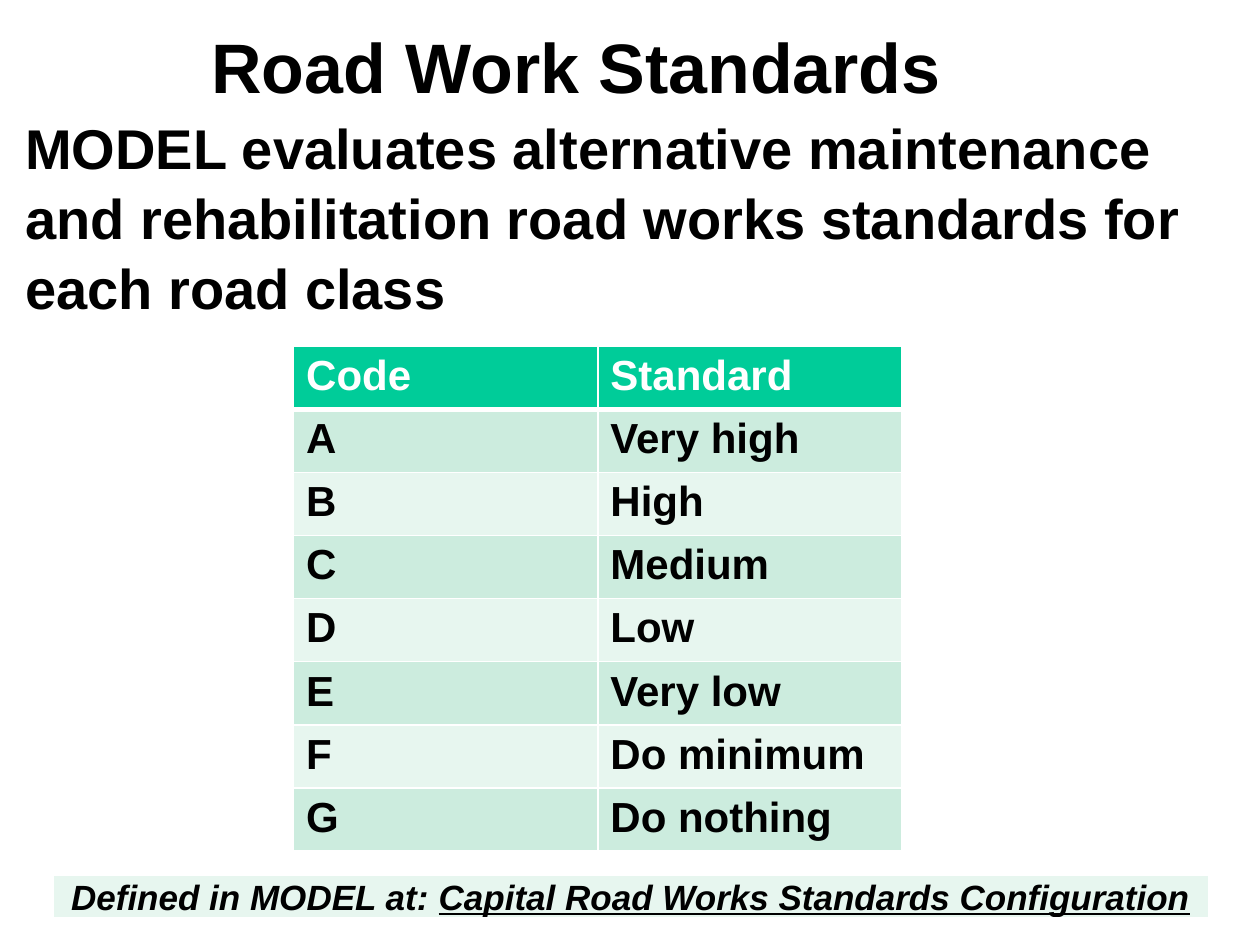
from lxml.etree import SubElement
from pptx import Presentation
from pptx.dml.color import RGBColor
from pptx.enum.text import MSO_ANCHOR, PP_ALIGN
from pptx.oxml.ns import qn
from pptx.util import Inches, Pt

BLACK = RGBColor(0x00, 0x00, 0x00)
WHITE = RGBColor(0xFF, 0xFF, 0xFF)
GREEN = RGBColor(0x00, 0xCC, 0x99)
MINT = RGBColor(0xCC, 0xEC, 0xDE)
PALE = RGBColor(0xE7, 0xF6, 0xEF)

STANDARDS = [
    ("Code", "Standard"),
    ("A", "Very high"),
    ("B", "High"),
    ("C", "Medium"),
    ("D", "Low"),
    ("E", "Very low"),
    ("F", "Do minimum"),
    ("G", "Do nothing"),
]


def add_run(p, text, size, color=BLACK, italic=None, underline=None):
    r = p.add_run()
    r.text = text
    font = r.font
    font.name = "Arial"
    font.size = Pt(size)
    font.bold = True
    font.italic = italic
    font.underline = underline
    font.color.rgb = color


def set_borders(cell, bottom=1):
    tcPr = cell._tc.get_or_add_tcPr()
    for side, width in (("L", 1), ("R", 1), ("T", 1), ("B", bottom)):
        ln = SubElement(tcPr, qn(f"a:ln{side}"), w=str(Pt(width)))
        fill = SubElement(ln, qn("a:solidFill"))
        SubElement(fill, qn("a:srgbClr"), val=str(WHITE))


def fill_cell(cell, color, bottom=1):
    set_borders(cell, bottom)
    cell.fill.solid()
    cell.fill.fore_color.rgb = color


def add_statement(s, left, top, width, height):
    sp = s.shapes.title
    sp.left, sp.top, sp.width, sp.height = left, top, width, height
    tf = sp.text_frame
    tf.word_wrap = True
    tf.vertical_anchor = MSO_ANCHOR.MIDDLE
    p = tf.paragraphs[0]
    p.alignment = PP_ALIGN.LEFT
    p.line_spacing = 1.04
    add_run(p, "MODEL evaluates alternative maintenance and rehabilitation "
               "road works standards for each road class", 32)


def add_heading(s, left, top, width, height):
    tf = s.shapes.add_textbox(left, top, width, height).text_frame
    tf.word_wrap = True
    tf.vertical_anchor = MSO_ANCHOR.MIDDLE
    add_run(tf.paragraphs[0], "Road Work Standards", 40)


def add_standards(s, left, top, width, height):
    table = s.shapes.add_table(len(STANDARDS), 2, left, top, width, height).table
    for i, row in enumerate(STANDARDS):
        header = i == 0
        color = GREEN if header else MINT if i % 2 else PALE
        for j, text in enumerate(row):
            cell = table.cell(i, j)
            fill_cell(cell, color, bottom=3 if header else 1)
            add_run(cell.text_frame.paragraphs[0], text, 24,
                    WHITE if header else BLACK)


def add_reference(s, left, top, width, height):
    cell = s.shapes.add_table(1, 1, left, top, width, height).table.cell(0, 0)
    fill_cell(cell, PALE)
    cell.margin_left = cell.margin_right = 0
    cell.margin_top = cell.margin_bottom = 0
    cell.vertical_anchor = MSO_ANCHOR.BOTTOM
    p = cell.text_frame.paragraphs[0]
    p.alignment = PP_ALIGN.CENTER
    add_run(p, "Defined in MODEL at: ", 20, italic=True)
    add_run(p, "Capital Road Works Standards Configuration", 20,
            italic=True, underline=True)


def main():
    prs = Presentation()
    prs.slide_width = Inches(10)
    prs.slide_height = Inches(7.5)
    s = prs.slides.add_slide(prs.slide_layouts[5])
    add_statement(s, Inches(0.1), Inches(0.92), Inches(9.83), Inches(1.58))
    add_heading(s, Inches(1.58), Inches(0.07), Inches(8.01), Inches(0.9))
    add_standards(s, Inches(2.33), Inches(2.75), Inches(4.83), Inches(3.82))
    add_reference(s, Inches(0.42), Inches(6.95), Inches(9.17), Inches(0.22))
    prs.save("out.pptx")


if __name__ == "__main__":
    main()
